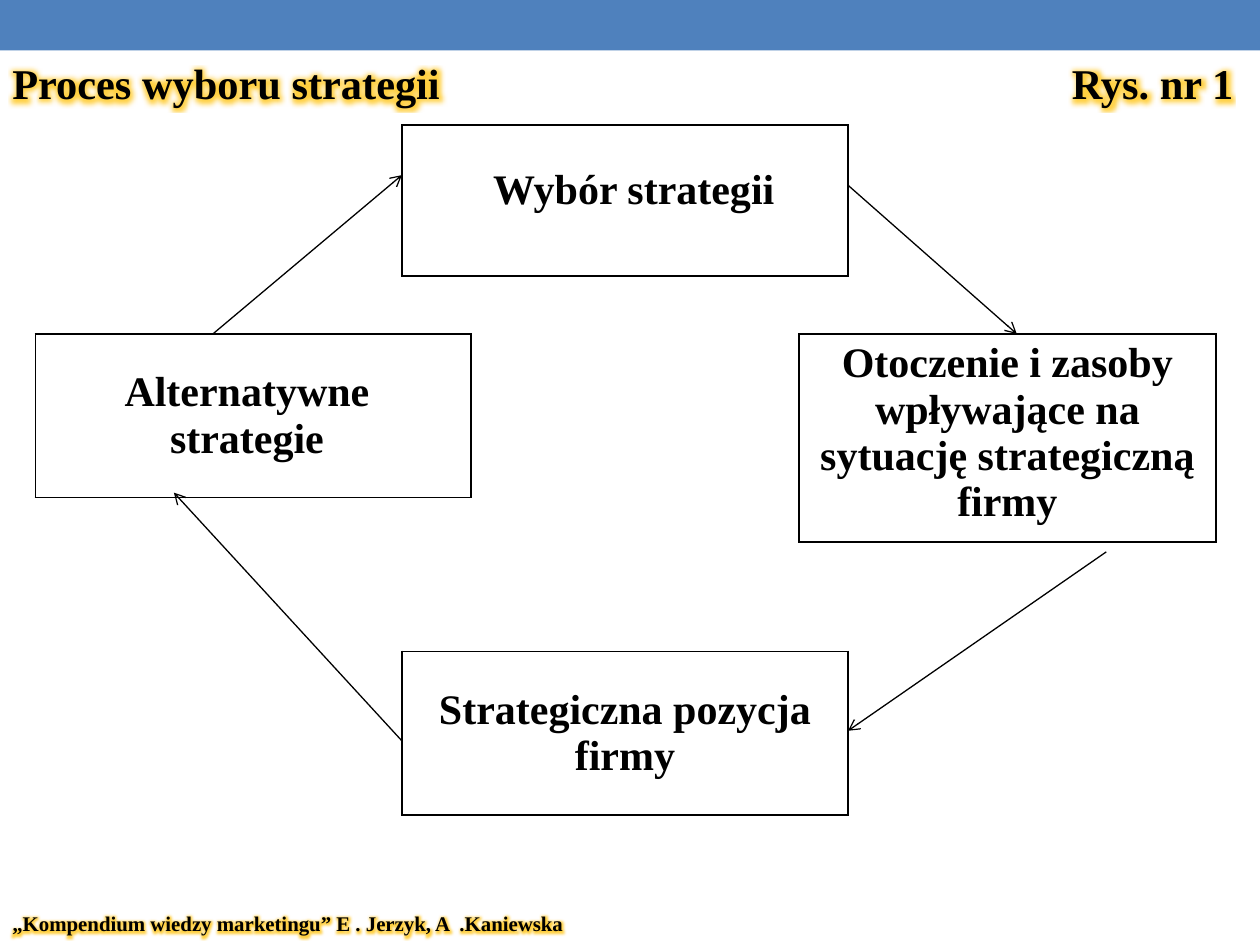
from dataclasses import dataclass
from lxml.etree import SubElement as Sub
from pptx import Presentation
from pptx.dml.color import RGBColor as RGB
from pptx.enum.shapes import MSO_CONNECTOR as Link, MSO_SHAPE as Kind
from pptx.enum.text import MSO_ANCHOR as Anchor, PP_ALIGN as Align
from pptx.oxml.ns import qn
from pptx.util import Inches, Pt


@dataclass(frozen=True)
class Theme:
    bar: str = "4F81BD"
    ink: str = "000000"
    glow: str = "FFC000"
    face: str = "Times New Roman"
    head: float = 24.2
    body: float = 24
    note: float = 11.9
    edge: float = 1
    thin: float = 0.75


class Board:
    """A slide on a grid of 100 columns and 75 rows."""

    def __init__(self, deck, theme):
        self.theme = theme
        self.slide = deck.slides.add_slide(deck.slide_layouts[6])
        self.shapes = self.slide.shapes
        self.col = deck.slide_width / 100
        self.row = deck.slide_height / 75

    def grid(self, x, y):
        return round(x * self.col), round(y * self.row)

    def font(self, para, size):
        font = para.font
        font.name, font.size, font.bold = self.theme.face, Pt(size), True
        font.color.rgb = RGB.from_string(self.theme.ink)

    def band(self, x, y, w, h):
        bar = self.shapes.add_shape(Kind.RECTANGLE, *self.grid(x, y), *self.grid(w, h))
        bar.shadow.inherit = False
        bar.fill.solid()
        bar.fill.fore_color.rgb = RGB.from_string(self.theme.bar)
        bar.line.fill.background()

    def box(self, x, y, w, h, text, anchor=Anchor.MIDDLE, left=1, right=1, top=0.5):
        frame = self.shapes.add_table(1, 1, *self.grid(x, y), *self.grid(w, h))
        table = frame.table
        table.first_row = table.horz_banding = False
        cell = table.cell(0, 0)
        cell.vertical_anchor = anchor
        cell.margin_left, cell.margin_top = self.grid(left, top)
        cell.margin_right = self.grid(right, 0)[0]
        cell.text = text
        para = cell.text_frame.paragraphs[0]
        para.alignment = Align.CENTER
        self.font(para, self.theme.body)
        # Borders come before the fill in the cell properties
        prop = cell._tc.get_or_add_tcPr()
        for side in ("lnL", "lnR", "lnT", "lnB"):
            line = Sub(prop, qn("a:" + side), w=str(Pt(self.theme.edge)))
            Sub(Sub(line, qn("a:solidFill")), qn("a:srgbClr"), val=self.theme.ink)
        cell.fill.background()

    def arrow(self, start, end):
        line = self.shapes.add_connector(Link.STRAIGHT, *self.grid(*start), *self.grid(*end))
        line.line.color.rgb = RGB.from_string(self.theme.ink)
        line.line.width = Pt(self.theme.thin)
        Sub(line.line._get_or_add_ln(), qn("a:tailEnd"), type="arrow")
        Sub(line._element.spPr, qn("a:effectLst"))

    def label(self, y, h, text, size, tab=None):
        box = self.shapes.add_textbox(*self.grid(0, y), *self.grid(100, h))
        frame = box.text_frame
        frame.word_wrap = True
        frame.margin_top = frame.margin_bottom = 0
        para = frame.paragraphs[0]
        if tab:
            tabs = Sub(para._p.get_or_add_pPr(), qn("a:tabLst"))
            Sub(tabs, qn("a:tab"), pos=str(self.grid(tab, 0)[0]), algn="r")
        run = para.add_run()
        run.text = text
        self.font(para, size)
        # Soft glow behind the letters
        fx = Sub(run._r.get_or_add_rPr(), qn("a:effectLst"))
        glow = Sub(fx, qn("a:glow"), rad=str(Pt(8)))
        tint = Sub(glow, qn("a:srgbClr"), val=self.theme.glow)
        Sub(tint, qn("a:alpha"), val="75000")


def main():
    deck = Presentation()
    deck.slide_width, deck.slide_height = Inches(10), Inches(7.5)
    theme = Theme()
    board = Board(deck, theme)

    # Top band
    board.band(0, 0, 100, 4)

    # Steps of the cycle
    mid, wide = 31.9, 35.4
    edge = mid + wide
    side = 26.5
    board.box(mid, 9.9, wide, 12, "Wybór strategii", Anchor.TOP, left=2.4, top=3.4)
    board.box(2.8, side, 34.6, 13, "Alternatywne strategie", right=2)
    board.box(mid, 51.7, wide, 13, "Strategiczna pozycja firmy")
    board.box(63.4, side, 33.1, 16.5,
              "Otoczenie i zasoby wpływające na sytuację strategiczną firmy", Anchor.TOP)

    # Arrows, clockwise
    for start, end in (
        ((edge, 14.7), (80.7, side)),
        ((87.8, 43.8), (edge, 58)),
        ((mid, 58.8), (13.8, 39.1)),
        ((16.9, side), (mid, 13.9)),
    ):
        board.arrow(start, end)

    # Heading and source
    board.label(4.5, 4, "Proces wyboru strategii\tRys. nr 1", theme.head, tab=96.9)
    board.label(72.3, 2, "„Kompendium wiedzy marketingu” E . Jerzyk, A  .Kaniewska", theme.note)

    deck.save("out.pptx")


if __name__ == "__main__":
    main()
